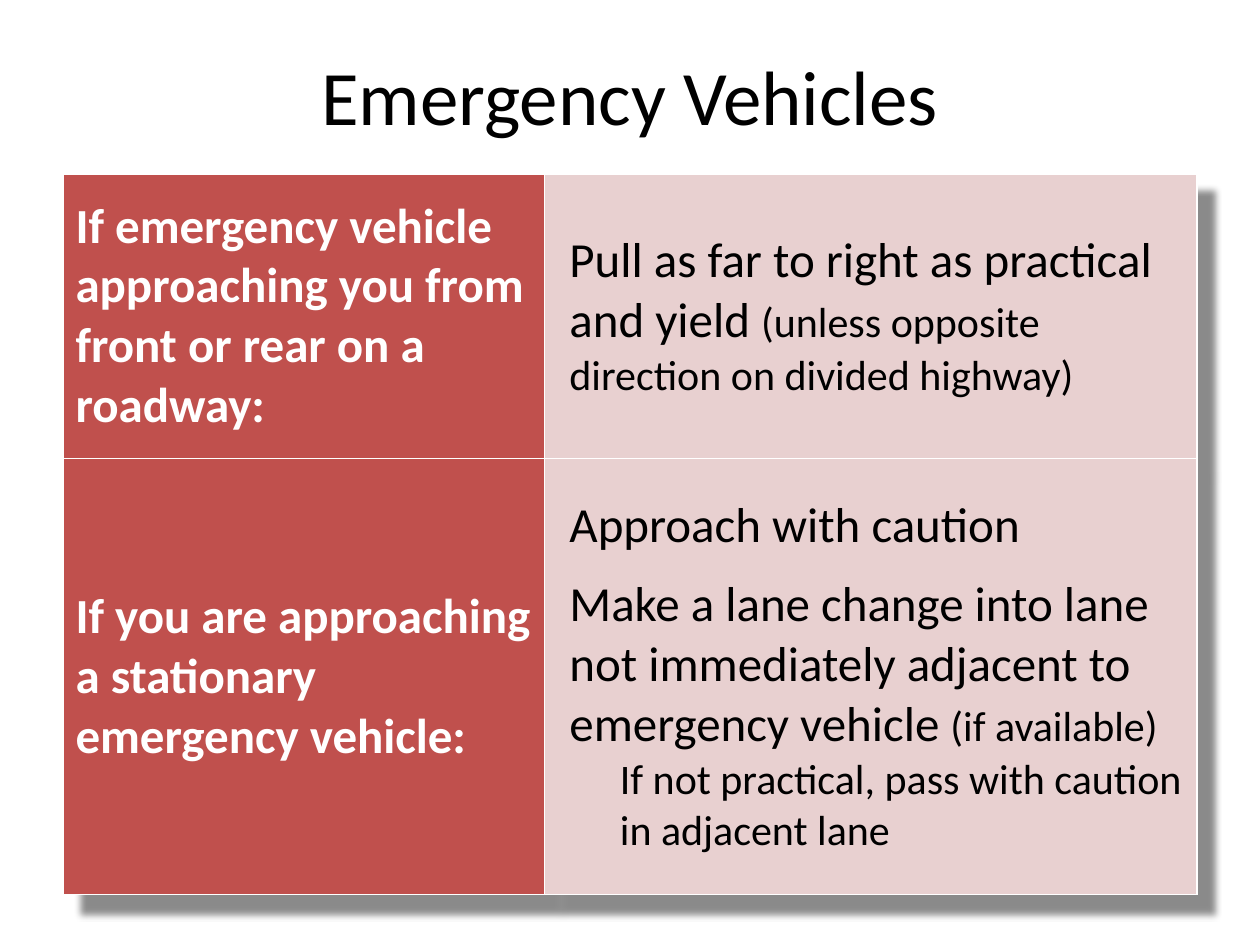
import lxml.etree
import pptx
import pptx.dml.color
import pptx.enum.text
import pptx.oxml
import pptx.oxml.ns
import pptx.util
from dataclasses import dataclass


@dataclass(frozen=True)
class Theme:
    """Colours, font and type sizes of the slide."""
    font: str = "Calibri"
    ink: str = "000000"
    paper: str = "FFFFFF"
    label_fill: str = "C0504D"
    answer_fill: str = "E8D0D0"
    title_size: int = 44
    body_size: int = 28
    note_size: int = 24


THEME = Theme()
WIDTH, HEIGHT = pptx.util.Inches(10), pptx.util.Inches(7.5)
MARGIN = 0.05
COLUMNS = (3.82, 5.18)
ROWS = (2.26, 3.46)
BODY, NOTE = THEME.body_size, THEME.note_size
RULES = [
    ("If emergency vehicle approaching you from front or rear on a roadway:",
     [(1, 0, [("Pull as far to right as practical and yield ", BODY),
              ("(unless opposite direction on divided highway)", NOTE)])]),
    ("If you are approaching a stationary emergency vehicle:",
     [(1, 11, [("Approach with caution", BODY)]),
      (1, 0, [("Make a lane change into lane not immediately adjacent to emergency vehicle ", BODY),
              ("(if available)", NOTE)]),
      (2, 0, [("If not practical, pass with caution in adjacent lane", NOTE)])]),
]
INDENTS = {1: 0.1, 2: 0.5}


def share_box(left, top, width, height):
    """Turn shares of the slide into a box of lengths."""
    return tuple(round(share * side) for share, side in
                 zip((left, top, width, height), (WIDTH, HEIGHT) * 2))


def add_span(para, text, size, colour, bold=False):
    """Append one formatted run to a paragraph."""
    span = para.add_run()
    span.text = text
    span.font.name = THEME.font
    span.font.size = pptx.util.Pt(size)
    span.font.bold = bold
    span.font.color.rgb = pptx.dml.color.RGBColor.from_string(colour)


def place_title(page, box, text):
    """Place the centred title in its box."""
    title = page.shapes.title
    title.left, title.top, title.width, title.height = box
    title.text_frame.vertical_anchor = pptx.enum.text.MSO_ANCHOR.MIDDLE
    para = title.text_frame.paragraphs[0]
    para.alignment = pptx.enum.text.PP_ALIGN.CENTER
    add_span(para, text, THEME.title_size, THEME.ink)


def style_cell(cell, fill):
    """Fill a cell, centre it vertically and outline it."""
    cell.vertical_anchor = pptx.enum.text.MSO_ANCHOR.MIDDLE
    cell.fill.solid()
    cell.fill.fore_color.rgb = pptx.dml.color.RGBColor.from_string(fill)
    properties = cell._tc.get_or_add_tcPr()
    for position, side in enumerate(("lnL", "lnR", "lnT", "lnB")):
        properties.insert(position, pptx.oxml.parse_xml(
            f'<a:{side} {pptx.oxml.ns.nsdecls("a")} w="12700"><a:solidFill>'
            f'<a:srgbClr val="{THEME.paper}"/></a:solidFill></a:{side}>'))


def add_table_shadow(table):
    """Cast a soft shadow down and right of the table."""
    table._tbl.tblPr.insert(0, pptx.oxml.parse_xml(
        f'<a:effectLst {pptx.oxml.ns.nsdecls("a")}>'
        '<a:outerShdw blurRad="50800" dist="190500" dir="2700000" algn="tl" rotWithShape="0">'
        f'<a:srgbClr val="{THEME.ink}"><a:alpha val="45000"/></a:srgbClr>'
        '</a:outerShdw></a:effectLst>'))


def write_answer(cell, paragraphs):
    """Write the indented paragraphs of an answer cell."""
    frame = cell.text_frame
    for index, (level, gap, spans) in enumerate(paragraphs):
        para = frame.add_paragraph() if index else frame.paragraphs[0]
        para.level = level
        para.space_after = pptx.util.Pt(gap)
        properties = para._p.get_or_add_pPr()
        properties.set("marL", str(pptx.util.Inches(INDENTS[level])))
        properties.set("indent", "0")
        for text, size in spans:
            add_span(para, text, size, THEME.ink)


def place_rules(page, box, rules):
    """Place the table of situations and answers in its box."""
    frame = page.shapes.add_table(len(rules), len(COLUMNS), *box)
    table = frame.table
    for column, portion in zip(table.columns, COLUMNS):
        column.width = round(box[2] * portion / sum(COLUMNS))
    for row, portion in zip(table.rows, ROWS):
        row.height = round(box[3] * portion / sum(ROWS))
    for row, (situation, answer) in zip(table.rows, rules):
        label, reply = row.cells
        style_cell(label, THEME.label_fill)
        style_cell(reply, THEME.answer_fill)
        add_span(label.text_frame.paragraphs[0], situation, BODY, THEME.paper, True)
        write_answer(reply, answer)
    add_table_shadow(table)


def main():
    """Build and save the deck."""
    deck = pptx.Presentation()
    deck.slide_width, deck.slide_height = WIDTH, HEIGHT
    page = deck.slides.add_slide(deck.slide_layouts.get_by_name("Title Only"))
    span = 1 - 2 * MARGIN
    place_title(page, share_box(MARGIN, 0.26 / 7.5, span, 0.99 / 7.5), "Emergency Vehicles")
    place_rules(page, share_box(MARGIN, 1.38 / 7.5, span, sum(ROWS) / 7.5), RULES)
    deck.save("out.pptx")


if __name__ == "__main__":
    main()
